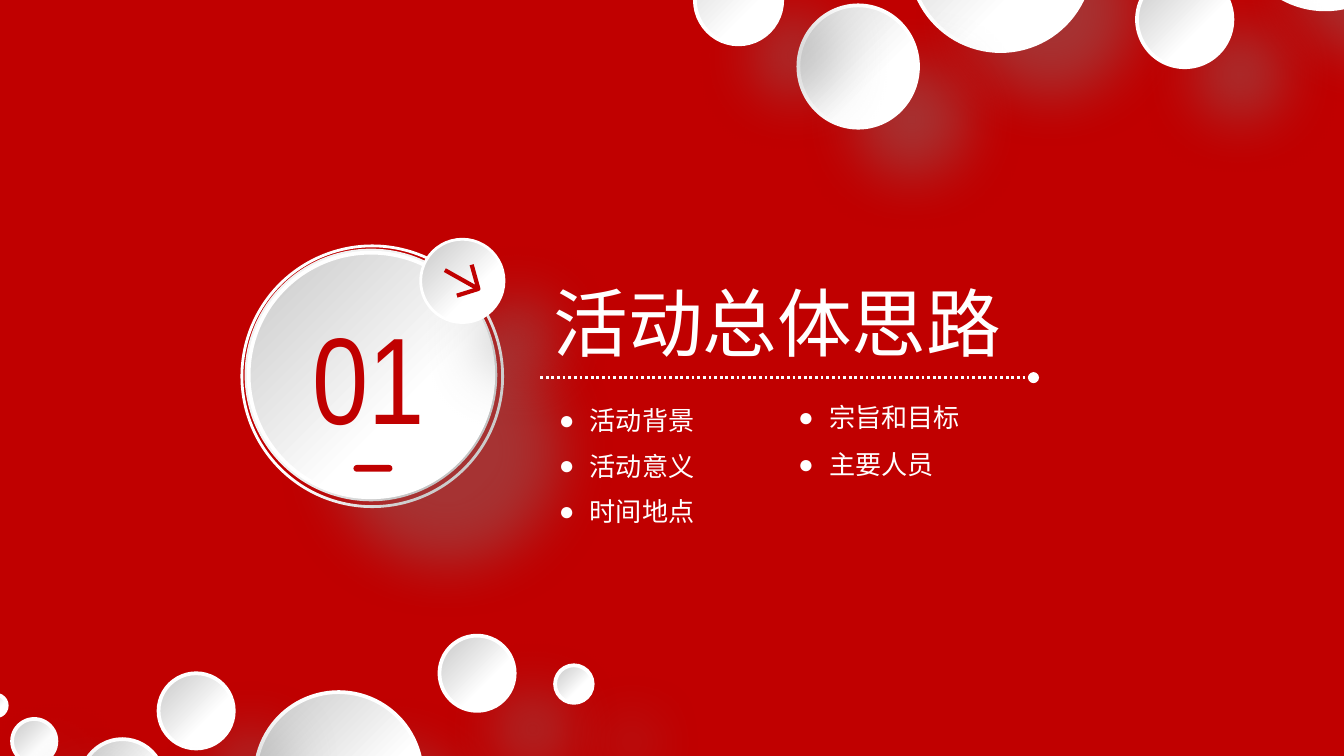
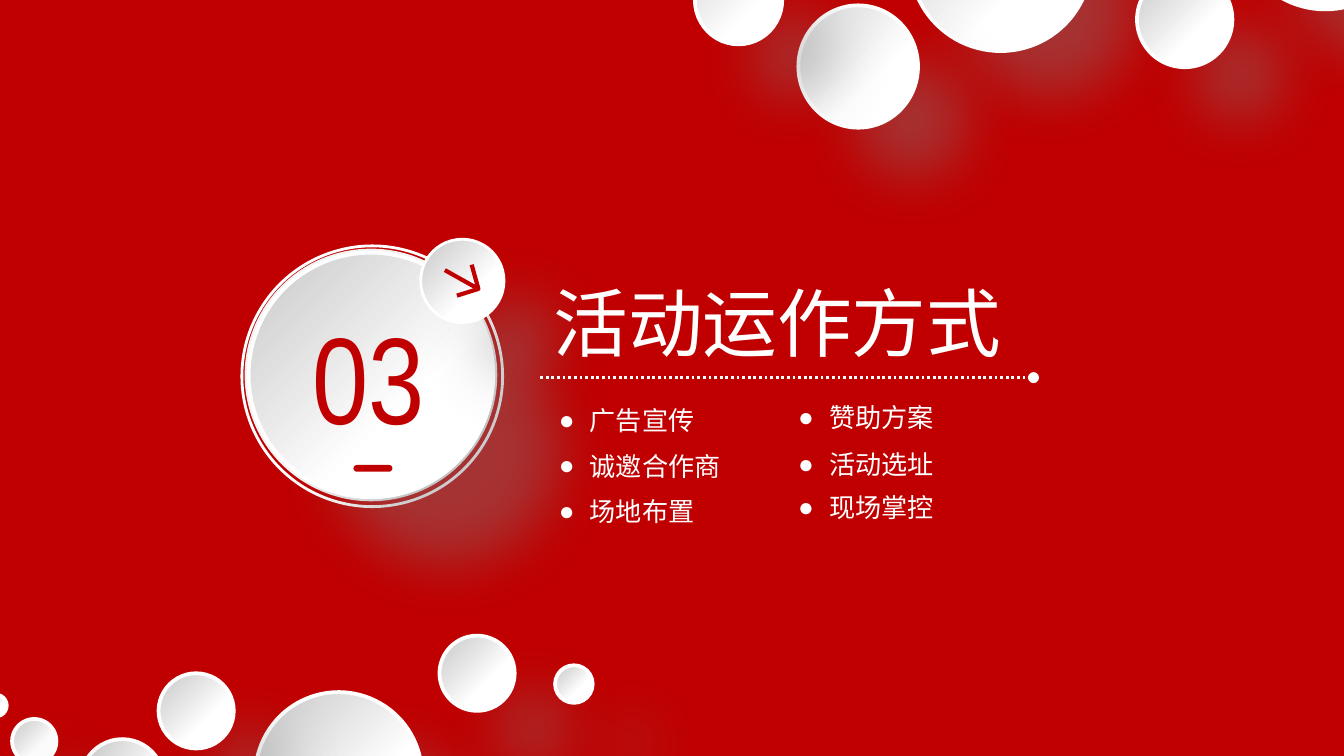
import pptx
import pptx.util
import pptx.dml.color
import pptx.enum.dml
import pptx.enum.shapes
import pptx.enum.text
import pptx.oxml
import pptx.oxml.ns

PX = 9144  # EMU in one px, 100 px to the inch
COLORS = {
    "red": "C00000",
    "white": "FFFFFF",
    "rim": "F2F2F2",
    "shade": "C7C7C7",
    "light_shade": "D9D9D9",
    "shadow": "808080",
}
CJK, NARROW = "Noto Sans CJK SC", "Arial Narrow"
FORMATS = {
    "number": {"size": pptx.util.Pt(66), "name": NARROW},
    "title": {"size": pptx.util.Pt(40), "name": CJK},
    "item": {"size": pptx.util.Pt(14), "name": CJK},
}
NUMBER_LEFT, NUMBER_RIGHT = 215, 334
ITEM_COLUMNS = [(406, (296, 330, 364)), (584, (294, 329, 361))]
# left, top, width, height, shade
BALLS = [
    (677, -97, 135, 135, "shade"),
    (920, -125, 132, 132, "shade"),
    (846, -21, 71, 71, "shade"),
    (594, 4, 89, 91, "light_shade"),
    (517, -33, 65, 66, "light_shade"),
    (327, 473, 56, 56, "shade"),
    (190, 515, 124, 124, "shade"),
    (413, 495, 28, 28, "shade"),
    (118, 501, 56, 56, "shade"),
    (60, 550, 62, 62, "shade"),
    (9, 535, 33, 33, "shade"),
    (-11, 517, 16, 16, "shade"),
]
SECTIONS = [
    ("01", "活动总体思路",
     [["活动背景", "活动意义", "时间地点"], ["宗旨和目标", "主要人员"]]),
    ("03", "活动运作方式",
     [["广告宣传", "诚邀合作商", "场地布置"], ["赞助方案", "活动选址", "现场掌控"]]),
]


def px(*lengths):
    return [n * PX for n in lengths]


def rgb(color):
    return pptx.dml.color.RGBColor.from_string(COLORS[color])


def xml(tag, attrs="", inner=""):
    ns = pptx.oxml.ns.nsdecls("a")
    return pptx.oxml.parse_xml(f"<a:{tag} {ns} {attrs}>{inner}</a:{tag}>")


def set_line(line, color, width):
    line.color.rgb = rgb(color)
    line.width = pptx.util.Pt(width)


def add_preset(s, kind, box, fill=None, line=None, width=1.5):
    sp = s.shapes.add_shape(kind, *px(*box))
    sp.shadow.inherit = False
    if fill:
        sp.fill.solid()
        sp.fill.fore_color.rgb = rgb(fill)
    else:
        sp.fill.background()
    if line:
        set_line(sp.line, line, width)
    else:
        sp.line.fill.background()
    return sp


def add_ball(s, box, shade="shade", width=2, distance=45):
    """Draw a white disc, shaded at the upper left, with a soft shadow."""
    sp = add_preset(s, pptx.enum.shapes.MSO_SHAPE.OVAL, box, None, "white", width)
    spPr = sp._element.spPr
    stops = "".join(
        f'<a:gs pos="{pos}000"><a:srgbClr val="{COLORS[color]}"/></a:gs>'
        for pos, color in ((0, "white"), (36, "white"), (100, shade)))
    gradient = xml("gradFill", 'rotWithShape="1"',
                   f'<a:gsLst>{stops}</a:gsLst><a:lin ang="13500000" scaled="0"/>')
    spPr.replace(spPr.find(pptx.oxml.ns.qn("a:noFill")), gradient)
    spPr.find(pptx.oxml.ns.qn("a:effectLst")).append(xml(
        "outerShdw",
        f'blurRad="{pptx.util.Pt(33)}" dist="{pptx.util.Pt(distance)}" '
        'dir="2700000" sx="90000" sy="90000" algn="tl" rotWithShape="0"',
        f'<a:srgbClr val="{COLORS["shadow"]}"><a:alpha val="40000"/></a:srgbClr>'))


def add_line(shapes, ends, color, width):
    cx = shapes.add_connector(pptx.enum.shapes.MSO_CONNECTOR.STRAIGHT, *px(*ends))
    set_line(cx.line, color, width)
    cx._element.spPr.append(xml("effectLst"))
    return cx


def add_text(s, box, text, style, color="white", centred=False):
    tf = s.shapes.add_textbox(*px(*box)).text_frame
    tf.word_wrap = False
    tf.auto_size = pptx.enum.text.MSO_AUTO_SIZE.SHAPE_TO_FIT_TEXT
    p = tf.paragraphs[0]
    if centred:
        p.alignment = pptx.enum.text.PP_ALIGN.CENTER
    r = p.add_run()
    r.text = text
    for key, value in FORMATS[style].items():
        setattr(r.font, key, value)
    r.font.color.rgb = rgb(color)
    r._r.get_or_add_rPr().append(xml("ea", f'typeface="{r.font.name}"'))
    return p


def add_item(s, left, top, text):
    p = add_text(s, (left, top, 42 + 20 * len(text), 34), text, "item")
    pPr = p._p.get_or_add_pPr()
    indent = 23 * PX
    pPr.set("marL", str(indent))
    pPr.set("indent", str(-indent))
    pPr.append(xml("buFont", 'typeface="Arial"'))
    pPr.append(xml("buChar", 'char="●"'))


def add_arrow(s):
    group = s.shapes.add_group_shape()
    start, *rest = [px(*point) for point in ((351, 197), (356, 215), (340, 220))]
    builder = group.shapes.build_freeform(*start)
    builder.add_line_segments(rest, close=False)
    head = builder.convert_to_shape()
    head.shadow.inherit = False
    head.fill.background()
    set_line(head.line, "red", 2.25)
    add_line(group.shapes, (331, 201, 356, 215), "red", 2.25)


def add_badge(s, number):
    oval = pptx.enum.shapes.MSO_SHAPE.OVAL
    add_preset(s, oval, (180, 183, 194, 194), line="white")
    add_preset(s, oval, (182, 185, 188, 188), fill="rim")
    add_ball(s, (185, 188, 182, 182), distance=66)
    add_ball(s, (313, 178, 62, 62), width=1.5)
    add_text(s, (NUMBER_LEFT, 219, NUMBER_RIGHT - NUMBER_LEFT, 121),
             number, "number", "red", centred=True)
    dash = add_preset(s, pptx.enum.shapes.MSO_SHAPE.ROUNDED_RECTANGLE,
                      (263, 346, 29, 5), fill="red")
    dash.adjustments[0] = 0.5
    add_arrow(s)


def add_heading(s, title):
    rule = add_line(s.shapes, (402, 281, 769, 281), "white", 1.5)
    rule.line.dash_style = pptx.enum.dml.MSO_LINE.ROUND_DOT
    rule.line._ln.append(xml("tailEnd", 'type="oval"'))
    add_text(s, (402, 201, 357, 77), title, "title")


def add_section(prs, number, title, columns):
    s = prs.slides.add_slide(prs.slide_layouts[6])
    s.background.fill.solid()
    s.background.fill.fore_color.rgb = rgb("red")
    add_badge(s, number)
    add_heading(s, title)
    for (left, tops), items in zip(ITEM_COLUMNS, columns):
        for top, text in zip(tops, items):
            add_item(s, left, top, text)
    for *box, shade in BALLS:
        add_ball(s, box, shade)


def main():
    prs = pptx.Presentation()
    prs.slide_width = 1000 * PX
    prs.slide_height = prs.slide_width * 9 // 16
    for section in SECTIONS:
        add_section(prs, *section)
    prs.save("out.pptx")


if __name__ == "__main__":
    main()
